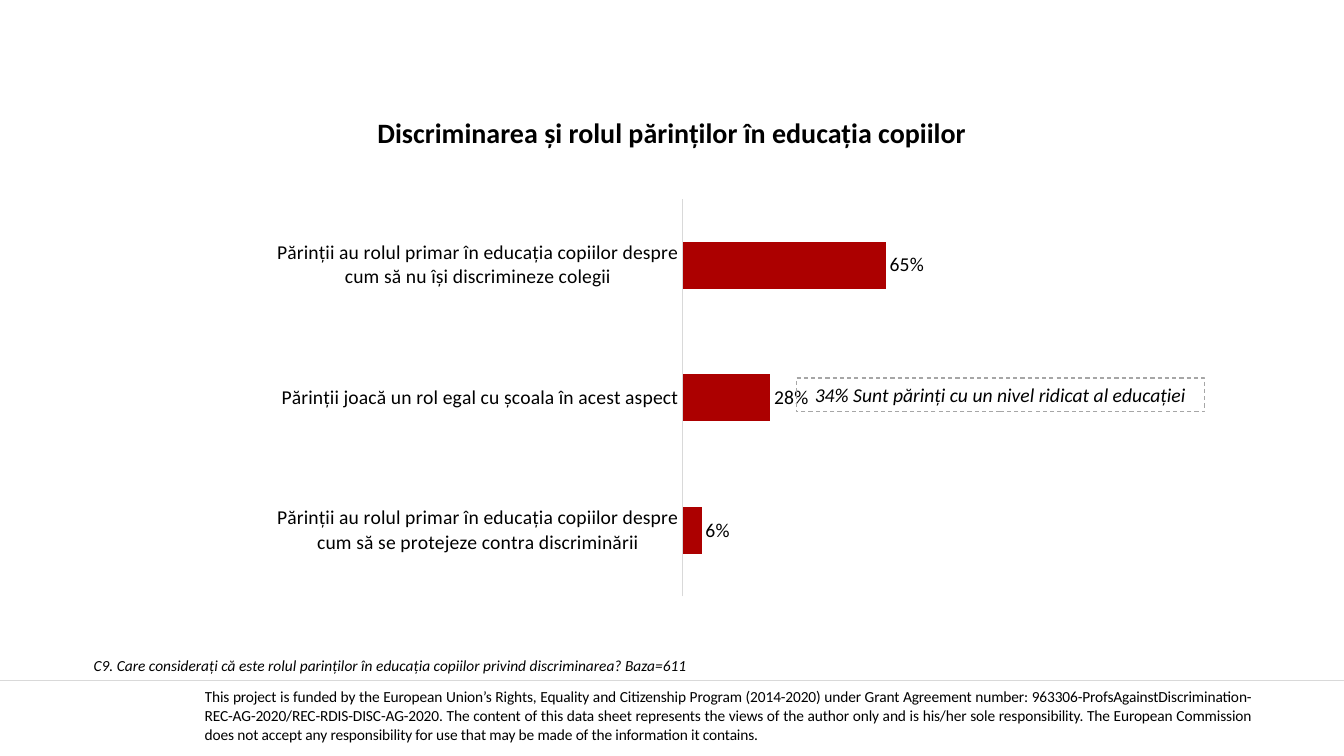
from pptx import Presentation
from pptx.chart.data import CategoryChartData
from pptx.dml.color import RGBColor
from pptx.enum.chart import XL_CHART_TYPE as Chart, XL_LABEL_POSITION as LabelPos, XL_TICK_MARK as Tick
from pptx.enum.dml import MSO_LINE as Dash
from pptx.enum.shapes import MSO_CONNECTOR as Conn, MSO_SHAPE as Shape
from pptx.enum.text import MSO_ANCHOR as Anchor, PP_ALIGN as Align
from pptx.oxml.ns import qn
from pptx.util import Pt
from lxml import etree

FONT = "Calibri"
COLORS = {"text": "000000", "bar": "AC0000", "rule": "D9D9D9", "dash": "A6A6A6"}
SLIDE_W, SLIDE_H = 960, 540

TITLE = "Discriminarea și rolul părinților în educația copiilor"
ANSWERS = {
    "Părinții au rolul primar în educația copiilor despre cum să nu își discrimineze colegii": 0.65,
    "Părinții joacă un rol egal cu școala în acest aspect": 0.28,
    "Părinții au rolul primar în educația copiilor despre cum să se protejeze contra discriminării": 0.06,
}
CALLOUT = "34% Sunt părinți cu un nivel ridicat al educației"
QUESTION = ("C9. Care considerați că este rolul parinților în educația copiilor "
            "privind discriminarea? Baza=611")
FUNDING = (
    "This project is funded by the European Union’s Rights, Equality and Citizenship Program "
    "(2014-2020) under Grant Agreement number: "
    "963306-ProfsAgainstDiscrimination-REC-AG-2020/REC-RDIS-DISC-AG-2020. "
    "The content of this data sheet represents the views of the author only and is his/her sole "
    "responsibility. The European Commission does not accept any responsibility for use that may "
    "be made of the information it contains."
)

# left, top, width, height in points
FUNDING_BOX = (146.2, 473.8, 748.1, 74.9)
CHART_BOX = (187.2, 136.1, 534.2, 295.9)
CALLOUT_BOX = (568.8, 270, 291.6, 24.3)
TITLE_BOX = (220.3, 72.7, 519.1, 46.1)
QUESTION_BOX = (59.8, 465.1, 867.6, 20.9)
RULE_Y = 486


def rgb(name):
    return RGBColor.from_string(COLORS[name])


def points(box):
    return [Pt(v) for v in box]


def style_font(font, size, **format_values):
    font.color.rgb = rgb("text")
    for key, value in {"name": FONT, "size": Pt(size), **format_values}.items():
        setattr(font, key, value)


def style_line(line, color, width):
    line.color.rgb = rgb(color)
    line.width = Pt(width)


def write(tf, text, size, align=Align.LEFT, **format_values):
    """Fill a text frame with one styled paragraph and return it."""
    tf.word_wrap = True
    p = tf.paragraphs[0]
    p.alignment = align
    r = p.add_run()
    r.text = text
    style_font(r.font, size, **format_values)
    return p


def add_funding(slide):
    table = slide.shapes.add_table(1, 1, *points(FUNDING_BOX)).table
    table.first_row = table.horz_banding = False
    cell = table.cell(0, 0)
    cell.fill.background()
    cell.vertical_anchor = Anchor.MIDDLE
    for side in ("left", "top", "right", "bottom"):
        setattr(cell, f"margin_{side}", 0)
    p = write(cell.text_frame, FUNDING, 11, Align.JUSTIFY)
    p.runs[0].font._element.set("spc", "-10")


def add_answers_chart(slide):
    data = CategoryChartData(number_format="0%")
    data.categories = list(ANSWERS)
    data.add_series("Series 1", list(ANSWERS.values()))
    chart = slide.shapes.add_chart(Chart.BAR_CLUSTERED, *points(CHART_BOX), data).chart
    chart.has_legend = chart.has_title = False
    style_font(chart.font, 10)

    axis = chart.category_axis
    axis.reverse_order = True
    axis.major_tick_mark = axis.minor_tick_mark = Tick.NONE
    style_font(axis.tick_labels.font, 14)
    style_line(axis.format.line, "rule", 0.75)

    values = chart.value_axis
    values.minimum_scale, values.maximum_scale = 0, 1
    values.has_major_gridlines = values.visible = False

    plot = chart.plots[0]
    plot.gap_width = 182
    plot.vary_by_categories = False
    series = plot.series[0]
    series.format.fill.solid()
    series.format.fill.fore_color.rgb = rgb("bar")
    labels = series.data_labels
    label_format = {"show_value": True, "position": LabelPos.OUTSIDE_END,
                    "number_format": "0%", "number_format_is_linked": False}
    for key, value in label_format.items():
        setattr(labels, key, value)
    style_font(labels.font, 14)


def add_callout(slide):
    sp = slide.shapes.add_shape(Shape.RECTANGLE, *points(CALLOUT_BOX))
    sp.shadow.inherit = False
    sp.fill.background()
    style_line(sp.line, "dash", 0.75)
    sp.line.dash_style = Dash.DASH
    write(sp.text_frame, CALLOUT, 14, Align.CENTER, italic=True)


def add_rule(slide):
    rule = slide.shapes.add_connector(Conn.STRAIGHT, *points((0, RULE_Y, SLIDE_W, RULE_Y)))
    style_line(rule.line, "rule", 0.5)
    etree.SubElement(rule._element.spPr, qn("a:effectLst"))


def main():
    prs = Presentation()
    prs.slide_width, prs.slide_height = Pt(SLIDE_W), Pt(SLIDE_H)
    slide = prs.slides.add_slide(prs.slide_layouts[6])

    add_funding(slide)
    add_answers_chart(slide)
    add_callout(slide)
    title = slide.shapes.add_textbox(*points(TITLE_BOX)).text_frame
    title.vertical_anchor = Anchor.MIDDLE
    write(title, TITLE, 20, Align.CENTER, bold=True).line_spacing = 0.9
    add_rule(slide)
    write(slide.shapes.add_textbox(*points(QUESTION_BOX)).text_frame, QUESTION, 11, italic=True)

    prs.save("out.pptx")


if __name__ == "__main__":
    main()
